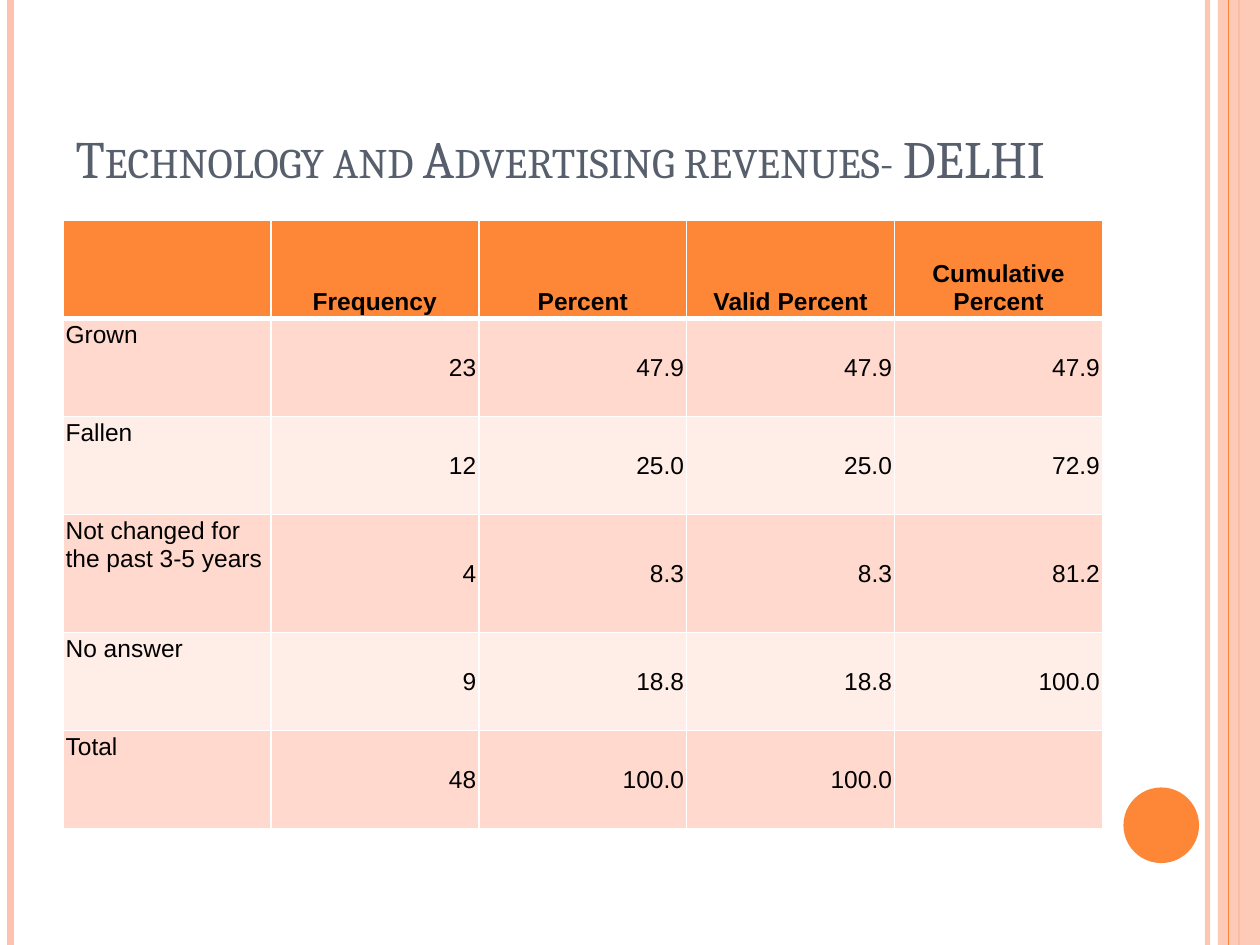
import pptx
import pptx.dml.color
import pptx.enum.shapes
import pptx.enum.text
import pptx.oxml
import pptx.oxml.ns
import pptx.util
import lxml.etree

Pt = pptx.util.Pt
ALIGN = pptx.enum.text.PP_ALIGN
ANCHOR = pptx.enum.text.MSO_ANCHOR
SHAPE = pptx.enum.shapes.MSO_SHAPE

WIDTH, HEIGHT = 720, 540
ORANGE, PEACH = "FE8637", "FEC3AE"
BANDS = ["FFD9CE", "FFEDE8"]
ROWS = [
    ["", "Frequency", "Percent", "Valid Percent", "Cumulative Percent"],
    ["Grown", "23", "47.9", "47.9", "47.9"],
    ["Fallen", "12", "25.0", "25.0", "72.9"],
    ["Not changed for the past 3-5 years", "4", "8.3", "8.3", "81.2"],
    ["No answer", "9", "18.8", "18.8", "100.0"],
    ["Total", "48", "100.0", "100.0", ""],
]
ROW_HEIGHTS = [56, 56, 56, 67.5, 56, 56]


def color(code):
    return pptx.dml.color.RGBColor.from_string(code)


def add_child(parent, tag, **attributes):
    child = lxml.etree.SubElement(parent, pptx.oxml.ns.qn(tag))
    for name, value in attributes.items():
        child.set(name, str(value))
    return child


def set_opacity(fill_owner, percent):
    for node in fill_owner.iter(pptx.oxml.ns.qn("a:srgbClr")):
        add_child(node, "a:alpha", val=percent * 1000)


def add_stripe(page, x, top, height, code, width, opacity=100):
    kind = pptx.enum.shapes.MSO_CONNECTOR.STRAIGHT
    stripe = page.shapes.add_connector(kind, Pt(x), Pt(top), Pt(x), Pt(top + height))
    stripe.line.color.rgb = color(code)
    stripe.line.width = Pt(width)
    properties = stripe._element.spPr
    if opacity < 100:
        set_opacity(properties, opacity)
    add_child(properties, "a:effectLst")


def add_solid(page, kind, left, top, width, height, code, opacity=100):
    solid = page.shapes.add_shape(kind, Pt(left), Pt(top), Pt(width), Pt(height))
    solid.shadow.inherit = False
    solid.fill.solid()
    solid.fill.fore_color.rgb = color(code)
    solid.line.fill.background()
    if opacity < 100:
        set_opacity(solid._element.spPr, opacity)


def add_frame(page, left, top, width, height):
    right = left + width
    add_stripe(page, right - 30, top, height, PEACH, 3, 93)
    add_stripe(page, left + 6, top, height, PEACH, 4.5)
    add_stripe(page, right - 12, top, height, ORANGE, 1.5)
    add_solid(page, SHAPE.RECTANGLE, right - 24, top, 24, height, PEACH, 87)
    add_stripe(page, right - 18, top, height, ORANGE, 0.75)
    add_solid(page, SHAPE.OVAL, right - 78, top + height - 90, 43.2, 43.2, ORANGE)


def fill_title(page, left, top, width, height):
    title = page.shapes.title
    title.left, title.top = Pt(left), Pt(top)
    title.width, title.height = Pt(width), Pt(height)
    frame = title.text_frame
    frame.word_wrap = True
    frame.auto_size = pptx.enum.text.MSO_AUTO_SIZE.NONE
    frame.vertical_anchor = ANCHOR.BOTTOM
    para = frame.paragraphs[0]
    para.alignment = ALIGN.LEFT
    span = para.add_run()
    span.text = "Technology and Advertising revenues- DELHI"
    span.font.name = "Cambria"
    span.font.size = Pt(30)
    span.font.color.rgb = color("575F6D")
    span._r.get_or_add_rPr().set("cap", "small")


def set_borders(cell, row):
    properties = cell._tc.get_or_add_tcPr()
    widths = {"L": 1, "R": 1, "T": 3 if row == 1 else 1, "B": 3 if row == 0 else 1}
    for side, width in widths.items():
        border = add_child(properties, f"a:ln{side}", w=Pt(width))
        add_child(add_child(border, "a:solidFill"), "a:srgbClr", val="FFFFFF")


def fill_cell(cell, text, row, column):
    set_borders(cell, row)
    cell.fill.solid()
    cell.fill.fore_color.rgb = color(ORANGE if row == 0 else BANDS[(row - 1) % 2])
    cell.margin_left = cell.margin_right = Pt(1.5)
    cell.margin_top = cell.margin_bottom = Pt(1.5)
    if not text:
        return
    if row == 0:
        anchor, alignment = ANCHOR.BOTTOM, ALIGN.CENTER
    elif column == 0:
        anchor, alignment = ANCHOR.TOP, ALIGN.LEFT
    else:
        anchor, alignment = ANCHOR.MIDDLE, ALIGN.RIGHT
    cell.vertical_anchor = anchor
    para = cell.text_frame.paragraphs[0]
    para.alignment = alignment
    para.line_spacing = Pt(16)
    span = para.add_run()
    span.text = text
    span.font.name = "Arial"
    span.font.size = Pt(14)
    span.font.bold = row == 0
    span.font.color.rgb = color("000000")


def add_revenue_table(page, left, top, width):
    columns = len(ROWS[0])
    table = page.shapes.add_table(
        len(ROWS), columns, Pt(left), Pt(top), Pt(width), Pt(sum(ROW_HEIGHTS))
    ).table
    for column in table.columns:
        column.width = Pt(width / columns)
    for row, (height, texts) in enumerate(zip(ROW_HEIGHTS, ROWS)):
        table.rows[row].height = Pt(height)
        for column, text in enumerate(texts):
            fill_cell(table.cell(row, column), text, row, column)


def main():
    deck = pptx.Presentation()
    deck.slide_width, deck.slide_height = Pt(WIDTH), Pt(HEIGHT)
    page = deck.slides.add_slide(deck.slide_layouts[5])
    add_frame(page, 0, 0, WIDTH, HEIGHT)
    fill_title(page, 36, 21.6, 588, 90)
    add_revenue_table(page, 36, 126, 594)
    deck.save("out.pptx")


if __name__ == "__main__":
    main()
